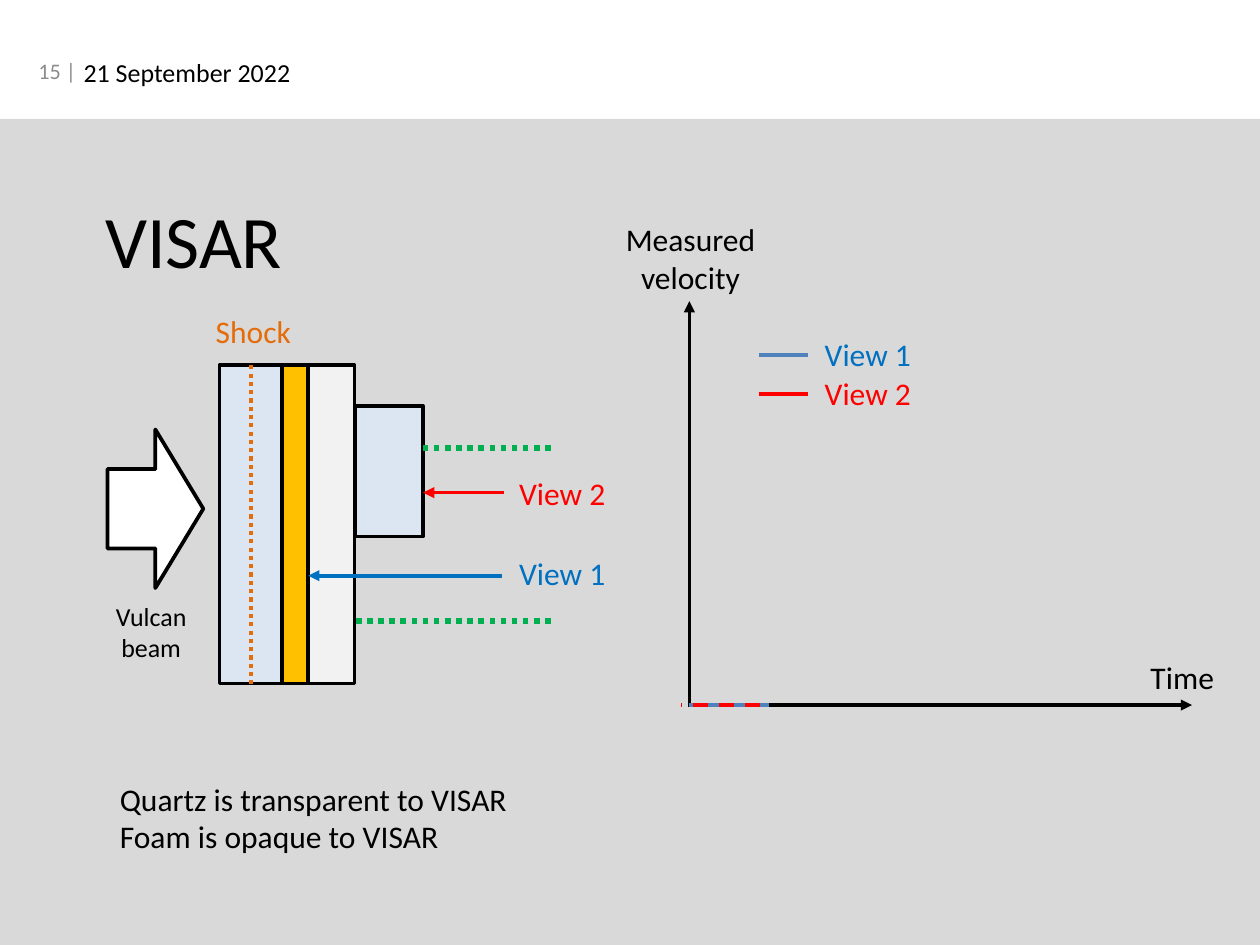
from lxml.etree import SubElement
from pptx import Presentation
from pptx.dml.color import RGBColor
from pptx.enum.dml import MSO_LINE as Dash
from pptx.enum.shapes import MSO_CONNECTOR as Connector, MSO_SHAPE as Preset
from pptx.enum.text import MSO_ANCHOR as Anchor, PP_ALIGN as Align
from pptx.oxml.ns import qn
from pptx.util import Pt

COLOURS = {
    "black": "000000", "white": "FFFFFF", "grey": "8C8C8C", "panel": "D9D9D9",
    "quartz": "DCE6F2", "gold": "FFC000", "pale": "F2F2F2", "shock": "E46C0A",
    "green": "00B050", "red": "FF0000", "blue": "0070C0", "trace": "4F81BD",
}


class SlideBuilder:
    font = "Calibri"
    label_size = 17
    line_width = 2

    def __init__(self, slide):
        self.slide = slide

    def colour(self, name):
        return RGBColor.from_string(COLOURS[name])

    def text(self, words, left, top, width, height, size=label_size,
             colour="black", align=Align.LEFT, anchor=Anchor.TOP):
        box = self.slide.shapes.add_textbox(Pt(left), Pt(top), Pt(width), Pt(height))
        frame = box.text_frame
        frame.word_wrap = True
        frame.vertical_anchor = anchor
        frame.text = words
        for paragraph in frame.paragraphs:
            paragraph.alignment = align
            paragraph.font.name = self.font
            paragraph.font.size = Pt(size)
            paragraph.font.color.rgb = self.colour(colour)

    def block(self, left, top, width, height, fill, outline=True, preset=Preset.RECTANGLE):
        shape = self.slide.shapes.add_shape(preset, Pt(left), Pt(top), Pt(width), Pt(height))
        shape.shadow.inherit = False
        shape.fill.solid()
        shape.fill.fore_color.rgb = self.colour(fill)
        if outline:
            shape.line.color.rgb = self.colour("black")
            shape.line.width = Pt(self.line_width)
        else:
            shape.line.fill.background()
        return shape

    def line(self, x1, y1, x2, y2, colour, width=line_width, dash=None, arrow=False):
        connector = self.slide.shapes.add_connector(
            Connector.STRAIGHT, Pt(x1), Pt(y1), Pt(x2), Pt(y2))
        connector.line.color.rgb = self.colour(colour)
        connector.line.width = Pt(width)
        if dash:
            connector.line.dash_style = dash
        if arrow:
            SubElement(connector.line._get_or_add_ln(), qn("a:tailEnd"), type="triangle")
        SubElement(connector._element.spPr, qn("a:effectLst"))
        return connector


def main():
    presentation = Presentation()
    presentation.slide_width, presentation.slide_height = Pt(680.4), Pt(510.5)
    slide = presentation.slides.add_slide(presentation.slide_layouts[6])
    builder = SlideBuilder(slide)

    # Header, panel and title
    builder.text("21 September 2022", 38, 26.8, 397, 24.5, size=14)
    builder.block(0, 64.2, 680.4, 446.3, "panel", outline=False)
    builder.text("15 |", 8.6, 24.5, 39.6, 27.4, size=12, colour="grey",
                 align=Align.RIGHT, anchor=Anchor.MIDDLE)
    builder.text("VISAR", 49.7, 101.5, 550, 55.4, size=40)

    # Target: three full-height layers and a step on the rear face
    target_top, target_height = 197.3, 172
    edge = 118.5
    layers = []
    for width, fill in ((34, "quartz"), (14, "gold"), (25, "pale")):
        layers.append(builder.block(edge, target_top, width, target_height, fill))
        edge += width
    gold_right, rear = edge - 25, edge
    step_width = 37
    step_right = rear + step_width
    builder.block(rear, 219.4, step_width, 70.5, "quartz")

    # Velocity axes and initial View 1 trace
    origin_x, axis_y = 372.3, 380.9
    builder.line(origin_x, axis_y, 643.7, axis_y, "black", arrow=True)
    builder.line(origin_x, 382, origin_x, 162.7, "black", arrow=True)
    builder.line(415.4, axis_y, origin_x, axis_y, "trace")

    # Limits of the probe beam
    for y, end in ((241.9, step_right), (335.5, rear)):
        builder.line(297.4, y, end, y, "green", width=3, dash=Dash.ROUND_DOT)

    # Lines of sight
    for words, colour, y, start, end, text_top in (
            ("View 2", "red", 266.1, 272, step_right, 252.7),
            ("View 1", "blue", 311, 271, gold_right, 295.5)):
        builder.line(start, y, end, y, colour, arrow=True)
        builder.text(words, 273.2, text_top, 68.4, 28, colour=colour)

    # Drive beam
    builder.text("Vulcan beam", 49.7, 321.1, 64, 41, size=14, align=Align.CENTER)
    builder.block(58, 232, 51.8, 85.7, "white", preset=Preset.RIGHT_ARROW)

    # Shock front
    shock = builder.line(135.5, target_top, 135.5, target_top + target_height,
                         "shock", width=2.25, dash=Dash.ROUND_DOT)
    shock.begin_connect(layers[0], 0)
    shock.end_connect(layers[0], 2)
    builder.text("Shock", 109.4, 164.9, 68.4, 28, colour="shock")

    # Initial View 2 trace
    builder.line(410.4, axis_y, 367.9, axis_y, "red", dash=Dash.DASH)

    # Notes on the materials
    builder.text("Quartz is transparent to VISAR\nFoam is opaque to VISAR",
                 57.6, 417.6, 255.6, 48.2)

    # Graph legend and axis titles
    for words, colour, line_colour, y in (
            ("View 1", "blue", "trace", 191.9), ("View 2", "red", "red", 213)):
        builder.line(409.7, y, 436.3, y, line_colour)
        builder.text(words, 438.2, y - 14.2, 68.4, 28, colour=colour)
    builder.text("Time", 614.2, 352.1, 64, 28)
    builder.text("Measured velocity", 321.8, 115.2, 102.2, 48.2, align=Align.CENTER)

    presentation.save("out.pptx")


if __name__ == "__main__":
    main()
